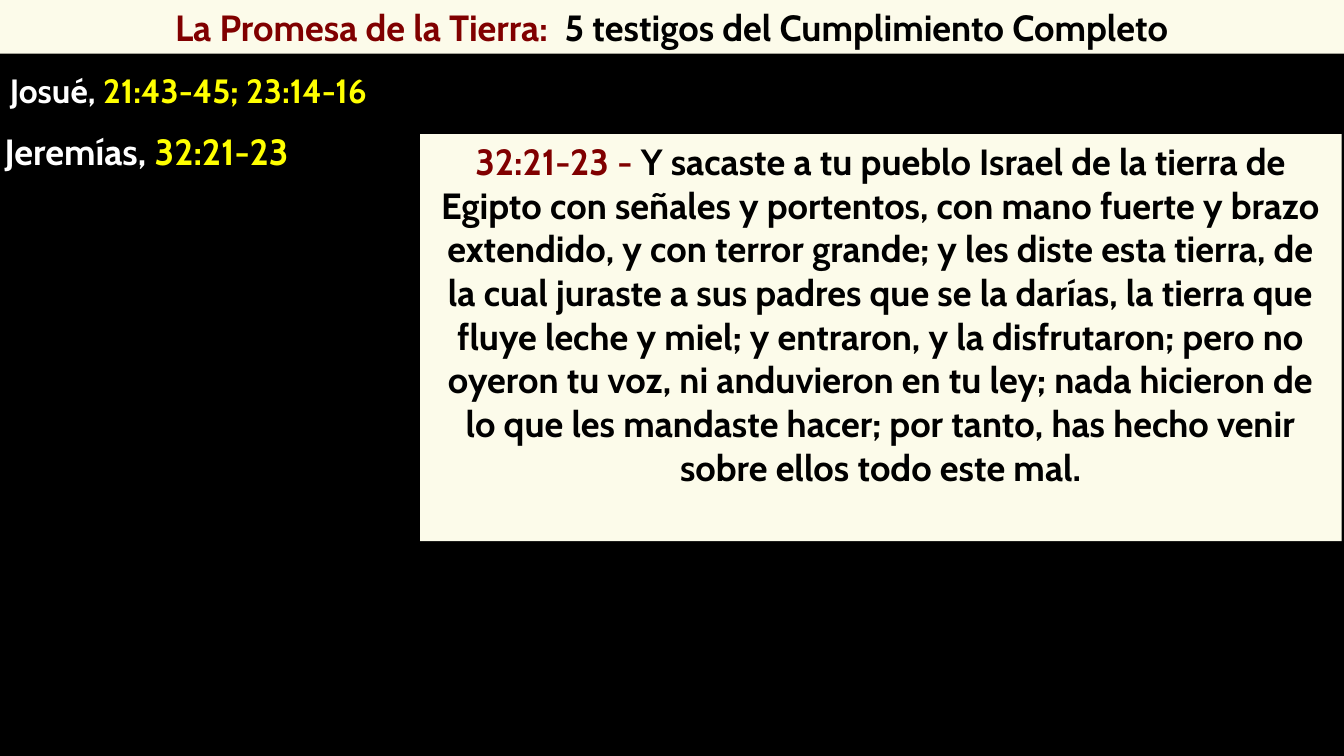
from pptx import Presentation
from pptx.dml.color import RGBColor
from pptx.enum.shapes import MSO_SHAPE
from pptx.enum.text import MSO_ANCHOR, MSO_AUTO_SIZE, PP_ALIGN
from pptx.util import Cm, Pt

BLACK = RGBColor(0x00, 0x00, 0x00)
WHITE = RGBColor(0xFF, 0xFF, 0xFF)
CREAM = RGBColor(0xFC, 0xFB, 0xEA)
MAROON = RGBColor(0x80, 0x00, 0x00)
YELLOW = RGBColor(0xFF, 0xFF, 0x00)
FONT = "Cabin"
SLIDE_WIDTH = Cm(33.87)

VERSE = (
    "Y sacaste a tu pueblo Israel de la tierra de Egipto con señales y "
    "portentos, con mano fuerte y brazo extendido, y con terror grande; y les "
    "diste esta tierra, de la cual juraste a sus padres que se la darías, la "
    "tierra que fluye leche y miel; y entraron, y la disfrutaron; pero no "
    "oyeron tu voz, ni anduvieron en tu ley; nada hicieron de lo que les "
    "mandaste hacer; por tanto, has hecho venir sobre ellos todo este mal."
)


def fill_solid(shape, color):
    shape.fill.solid()
    shape.fill.fore_color.rgb = color


def write_runs(shape, runs, size, alignment, anchor=MSO_ANCHOR.TOP, line_spacing=1.0):
    """Write one bold paragraph from (text, color) pairs."""
    text_frame = shape.text_frame
    text_frame.word_wrap = True
    text_frame.auto_size = MSO_AUTO_SIZE.NONE
    text_frame.vertical_anchor = anchor
    paragraph = text_frame.paragraphs[0]
    paragraph.alignment = alignment
    paragraph.line_spacing = line_spacing
    for text, color in runs:
        run = paragraph.add_run()
        run.text = text
        run.font.name = FONT
        run.font.size = Pt(size)
        run.font.bold = True
        run.font.color.rgb = color


def format_title(slide, heading, subject):
    title = slide.shapes.title
    title.left, title.top = Cm(0), Cm(0)
    title.width, title.height = SLIDE_WIDTH, Cm(1.35)
    fill_solid(title, CREAM)
    write_runs(title, [(heading, MAROON), (subject, BLACK)], 26,
               PP_ALIGN.CENTER, MSO_ANCHOR.MIDDLE)


def add_verse_panel(slide, reference, verse):
    panel = slide.shapes.add_shape(
        MSO_SHAPE.RECTANGLE, Cm(10.59), Cm(3.38), Cm(23.22), Cm(10.26))
    panel.shadow.inherit = False
    panel.line.fill.background()
    fill_solid(panel, CREAM)
    write_runs(panel, [(reference, MAROON), (verse, BLACK)], 26, PP_ALIGN.CENTER)


def add_witness(slide, left, top, width, height, name, reference, size):
    box = slide.shapes.add_textbox(Cm(left), Cm(top), Cm(width), Cm(height))
    write_runs(box, [(name, WHITE), (reference, YELLOW)], size,
               PP_ALIGN.LEFT, line_spacing=0.95)


def main():
    presentation = Presentation()
    presentation.slide_width = SLIDE_WIDTH
    presentation.slide_height = Cm(19.05)
    slide = presentation.slides.add_slide(presentation.slide_layouts[5])
    fill_solid(slide.background, BLACK)

    format_title(slide, "La Promesa de la Tierra:",
                 "  5 testigos del Cumplimiento Completo")
    add_verse_panel(slide, "32:21-23 - ", VERSE)
    add_witness(slide, -0.13, 3.2, 9.65, 1.32, "Jeremías,", " 32:21-23", 26)
    add_witness(slide, 0, 1.7, 12.17, 1.22, "Josué,", " 21:43-45; 23:14-16", 24)

    presentation.save("out.pptx")


if __name__ == "__main__":
    main()
